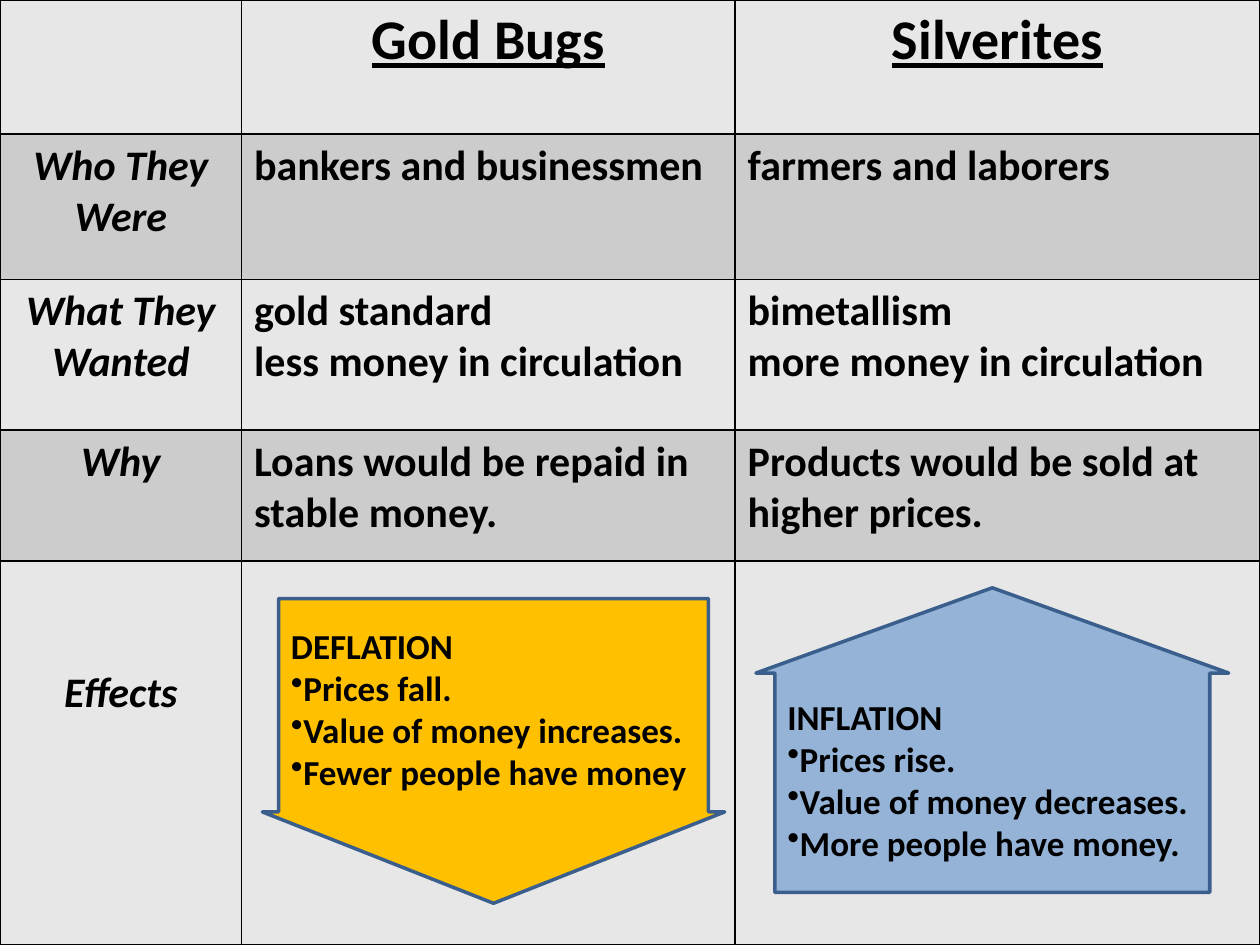
from pptx import Presentation
from pptx.dml.color import RGBColor
from pptx.enum.shapes import MSO_SHAPE
from pptx.enum.text import MSO_ANCHOR, PP_ALIGN
from pptx.oxml import parse_xml
from pptx.oxml.ns import nsdecls
from pptx.util import Cm, Pt

DOWN, UP = MSO_SHAPE.DOWN_ARROW, MSO_SHAPE.UP_ARROW
LEFT, CENTER = PP_ALIGN.LEFT, PP_ALIGN.CENTER
MIDDLE = MSO_ANCHOR.MIDDLE

BLACK = RGBColor(0x00, 0x00, 0x00)
LIGHT_GREY = RGBColor(0xE7, 0xE7, 0xE7)
MID_GREY = RGBColor(0xCC, 0xCC, 0xCC)
GOLD = RGBColor(0xFF, 0xC0, 0x00)
SILVER_BLUE = RGBColor(0x95, 0xB3, 0xD7)
OUTLINE = RGBColor(0x3A, 0x5F, 0x8C)

COLUMN_WIDTHS = [4.87, 9.95, 10.58]
ROW_HEIGHTS = [2.7, 2.93, 3.04, 2.64, 7.74]
EFFECTS_TOP_MARGIN = 2.15

# Each cell is a list of paragraphs
ROWS = [
    [[], ["Gold Bugs"], ["Silverites"]],
    [["Who They Were"], ["bankers and businessmen"], ["farmers and laborers"]],
    [["What They Wanted"],
     ["gold standard", "less money in circulation"],
     ["bimetallism", "more money in circulation"]],
    [["Why"],
     ["Loans would be repaid in stable money."],
     ["Products would be sold at higher prices."]],
    [["Effects"], [], []],
]

HEADING = {"size": Pt(32), "underline": True}
ROW_LABEL = {"size": Pt(24), "italic": True}
BODY = {"size": Pt(24)}
EFFECT = {"size": Pt(20)}


class ComparisonSlide:
    """Holds the shared text style and the slide being built."""

    base_font = {"name": "Calibri", "bold": True}
    border_sides = ("a:lnL", "a:lnR", "a:lnT", "a:lnB")

    def __init__(self, deck):
        self.page = deck.slides.add_slide(deck.slide_layouts[6])

    def add_lines(self, frame, lines, font, align=LEFT):
        for index, line in enumerate(lines):
            para = frame.paragraphs[0] if index == 0 else frame.add_paragraph()
            para.alignment = align
            span = para.add_run()
            span.text = line
            for name, value in {**self.base_font, **font}.items():
                setattr(span.font, name, value)
            span.font.color.rgb = BLACK

    def border(self, cell):
        properties = cell._tc.get_or_add_tcPr()
        for position, side in enumerate(self.border_sides):
            properties.insert(position, parse_xml(
                f'<{side} {nsdecls("a")} w="12700"><a:solidFill>'
                f'<a:srgbClr val="{BLACK}"/></a:solidFill></{side}>'))

    def table(self, rows, widths, heights):
        frame = self.page.shapes.add_table(
            len(rows), len(widths), 0, 0, Cm(sum(widths)), Cm(sum(heights)))
        table = frame.table
        table.first_row = False
        for column, width in zip(table.columns, widths):
            column.width = Cm(width)
        for row, height in zip(table.rows, heights):
            row.height = Cm(height)
        for r, row in enumerate(rows):
            for c, lines in enumerate(row):
                cell = table.cell(r, c)
                cell.fill.solid()
                cell.fill.fore_color.rgb = MID_GREY if r % 2 else LIGHT_GREY
                self.border(cell)
                font = HEADING if r == 0 else ROW_LABEL if c == 0 else BODY
                align = CENTER if r == 0 or c == 0 else LEFT
                self.add_lines(cell.text_frame, lines, font, align)
        return table

    def arrow(self, kind, place, adjustments, color, heading, effects):
        box = self.page.shapes.add_shape(kind, *(Cm(n) for n in place))
        for index, value in enumerate(adjustments):
            box.adjustments[index] = value
        box.shadow.inherit = False
        box.fill.solid()
        box.fill.fore_color.rgb = color
        box.line.color.rgb = OUTLINE
        box.line.width = Pt(2)
        frame = box.text_frame
        frame.word_wrap = True
        frame.vertical_anchor = MIDDLE
        self.add_lines(frame, [heading, *effects], EFFECT)
        for para in frame.paragraphs[1:]:
            para._p.get_or_add_pPr().append(
                parse_xml(f'<a:buChar {nsdecls("a")} char="•"/>'))


def main():
    deck = Presentation()
    deck.slide_width, deck.slide_height = Cm(25.4), Cm(19.05)
    slide = ComparisonSlide(deck)

    # Comparison table
    table = slide.table(ROWS, COLUMN_WIDTHS, ROW_HEIGHTS)
    table.cell(len(ROWS) - 1, 0).margin_top = Cm(EFFECTS_TOP_MARGIN)

    # Effects on prices and money
    slide.arrow(DOWN, (5.29, 12.07, 9.32, 6.14), (0.93, 0.3), GOLD,
                "DEFLATION", ["Prices fall.", "Value of money increases.",
                              "Fewer people have money"])
    slide.arrow(UP, (15.24, 11.85, 9.53, 6.14), (0.92, 0.28), SILVER_BLUE,
                "INFLATION", ["Prices rise.", "Value of money decreases.",
                              "More people have money."])

    deck.save("out.pptx")


if __name__ == "__main__":
    main()
